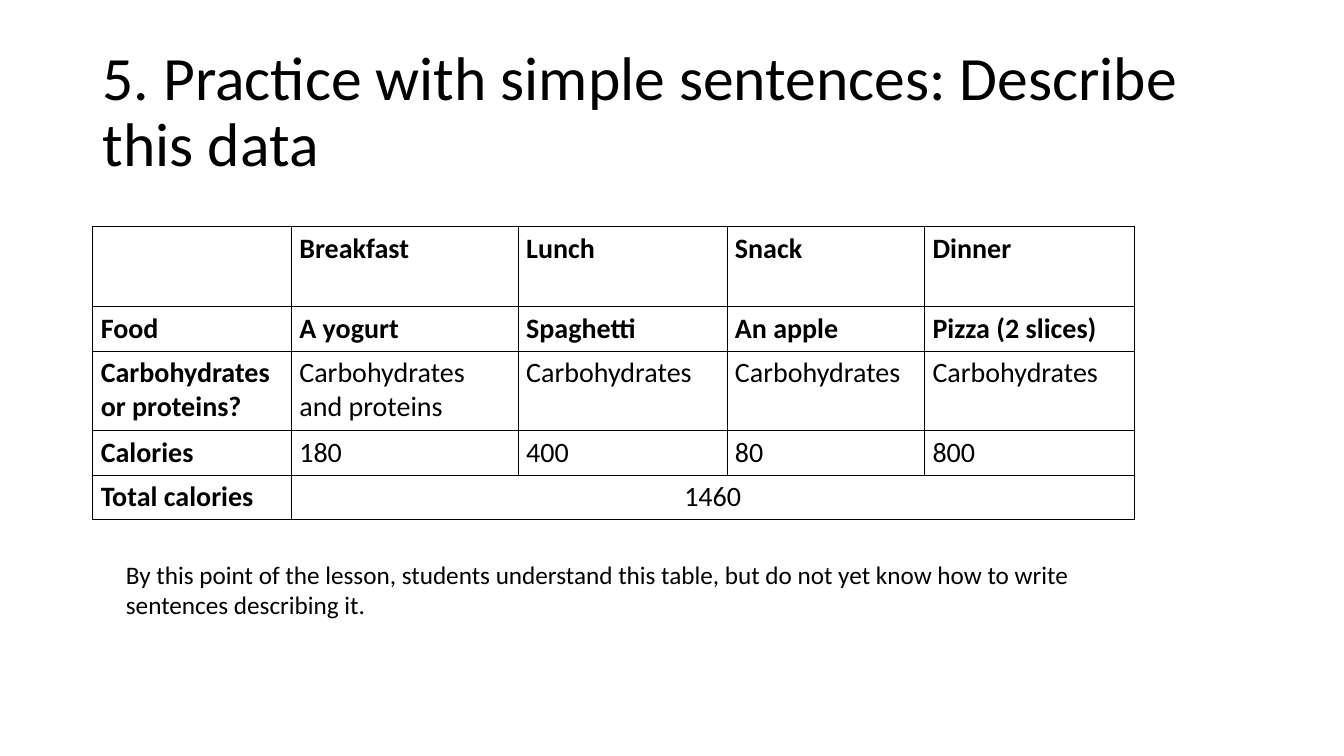
from lxml.etree import SubElement as Sub
from pptx import Presentation
from pptx.dml.color import RGBColor as Rgb
from pptx.enum.text import MSO_ANCHOR as Anchor, PP_ALIGN as Align
from pptx.oxml.ns import qn
from pptx.util import Inches, Pt

WIDE, HIGH = 13.33, 7.5
FONT = "Calibri"
INK = {"text": "000000", "rule": "000000"}
COLS = [1.97, 2.25, 2.07, 1.96, 2.08]
ROWS = [0.79, 0.44, 0.79, 0.44, 0.44]
CARBS = "Carbohydrates"
MEALS = [
    ["", "Breakfast", "Lunch", "Snack", "Dinner"],
    ["Food", "A yogurt", "Spaghetti", "An apple", "Pizza (2 slices)"],
    ["Carbohydrates or proteins?", "Carbohydrates and proteins"] + [CARBS] * 3,
    ["Calories", "180", "400", "80", "800"],
    ["Total calories", "1460", "", "", ""],
]


def write(frame, text, size, bold=False, align=Align.LEFT):
    frame.text = text
    frame.word_wrap = True
    para = frame.paragraphs[0]
    para.alignment = align
    for run in para.runs:
        font = run.font
        font.name, font.size, font.bold = FONT, Pt(size), bold
        font.color.rgb = Rgb.from_string(INK["text"])
    return para


def rule(cell):
    props = cell._tc.get_or_add_tcPr()
    for side in ("lnL", "lnR", "lnT", "lnB"):
        line = Sub(props, qn("a:" + side), w=str(Pt(0.5)))
        fill = Sub(line, qn("a:solidFill"))
        Sub(fill, qn("a:srgbClr"), val=INK["rule"])
    cell.fill.background()


def add_title(slide, box):
    title = slide.shapes.title
    title.left, title.top, title.width, title.height = map(Inches, box)
    title.text_frame.vertical_anchor = Anchor.MIDDLE
    text = "5. Practice with simple sentences: Describe this data"
    write(title.text_frame, text, 44).line_spacing = 0.9


def add_meals(slide, box):
    frame = slide.shapes.add_table(len(ROWS), len(COLS), *map(Inches, box))
    table = frame.table
    for col, width in zip(table.columns, COLS):
        col.width = Inches(width)
    for row, height in zip(table.rows, ROWS):
        row.height = Inches(height)
    # The total spans every meal
    last = len(ROWS) - 1
    table.cell(last, 1).merge(table.cell(last, len(COLS) - 1))
    for r, line in enumerate(MEALS):
        for c, text in enumerate(line):
            cell = table.cell(r, c)
            cell.margin_left = cell.margin_right = Inches(0.08)
            cell.margin_top = cell.margin_bottom = Inches(0.05)
            align = Align.CENTER if r == last and c else Align.LEFT
            write(cell.text_frame, text, 20, r < 2 or c == 0, align)
            rule(cell)


def add_note(slide, box):
    note = slide.shapes.add_textbox(*map(Inches, box))
    text = ("By this point of the lesson, students understand this table, "
            "but do not yet know how to write sentences describing it.")
    write(note.text_frame, text, 18)


def main():
    deck = Presentation()
    deck.slide_width, deck.slide_height = Inches(WIDE), Inches(HIGH)
    slide = deck.slides.add_slide(deck.slide_layouts[5])
    # Title, table and note from top to bottom
    left = 0.069 * WIDE
    add_title(slide, (left, 0.4, WIDE - 2 * left, 1.45))
    add_meals(slide, (left, 0.3 * HIGH, sum(COLS), sum(ROWS)))
    add_note(slide, (1.15, 5.5, 10.08, 0.71))
    deck.save("out.pptx")


if __name__ == "__main__":
    main()
